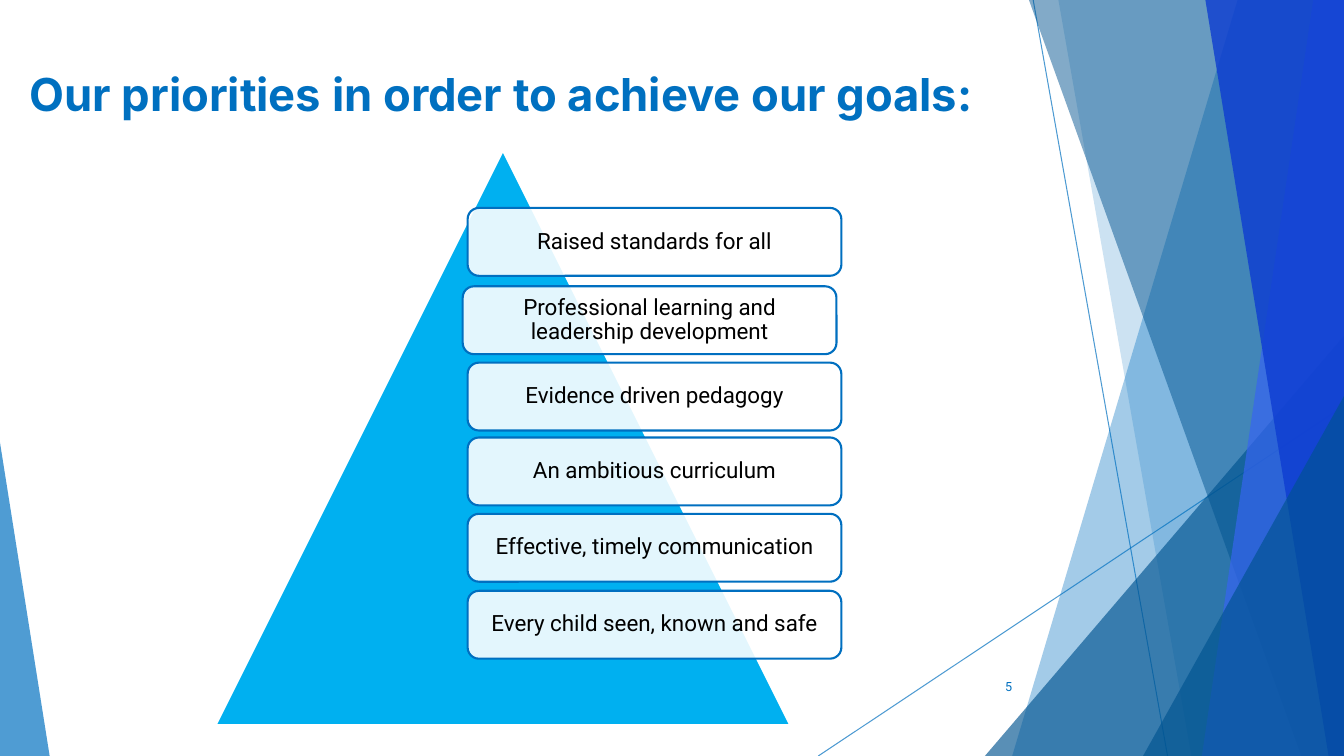
from lxml.etree import SubElement
from pptx import Presentation
from pptx.dml.color import RGBColor
from pptx.enum.shapes import MSO_CONNECTOR, MSO_SHAPE
from pptx.enum.text import MSO_ANCHOR, MSO_AUTO_SIZE, PP_ALIGN
from pptx.oxml.ns import qn
from pptx.util import Pt

WIDE, HIGH = 960, 540
COLORS = {
    "blue": "0070C0", "edge": "006FC0", "deep": "005390", "royal": "3764F2",
    "navy": "0D3CD1", "sky": "00B0F0", "white": "FFFFFF", "black": "000000",
}
# top left x, bottom left x, colour, opacity; each band runs to the right edge
BACK_BANDS = [(884, 723, "blue", 36), (756, 851, "blue", 20)]
FRONT_BANDS = [(735, 929.5, "deep", 49), (938, 858.5, "royal", 69),
               (861, 949, "navy", 80)]
# top, text
CARDS = [
    (148.5, "Raised standards for all"),
    (204.5, "Professional learning and leadership development"),
    (259, "Evidence driven pedagogy"),
    (312.5, "An ambitious curriculum"),
    (367, "Effective, timely communication"),
    (422, "Every child seen, known and safe"),
]


def rgb(name):
    return RGBColor.from_string(COLORS[name])


def fade(fill, percent):
    """Set the opacity of a solid fill or line."""
    color = fill._xPr.find(qn("a:solidFill"))[0]
    SubElement(color, qn("a:alpha"), val=str(percent * 1000))


def paint(shape, fill, alpha=100, line=None):
    shape.shadow.inherit = False
    shape.fill.solid()
    shape.fill.fore_color.rgb = rgb(fill)
    if alpha < 100:
        fade(shape.fill, alpha)
    if line:
        shape.line.color.rgb = rgb(line)
        shape.line.width = Pt(1.5)
    else:
        shape.line.fill.background()


def add_line(slide, *ends):
    line = slide.shapes.add_connector(MSO_CONNECTOR.STRAIGHT, *map(Pt, ends))
    line.line.color.rgb = rgb("blue")
    line.line.width = Pt(0.75)
    fade(line.line.fill, 69)
    SubElement(line._element.spPr, qn("a:effectLst"))


def add_band(slide, top, foot, color, alpha):
    pen = slide.shapes.build_freeform(Pt(top), 0)
    pen.add_line_segments([(Pt(x), Pt(y)) for x, y in
                           ((WIDE, 0), (WIDE, HIGH), (foot, HIGH))])
    paint(pen.convert_to_shape(), color, alpha)


def add_peak(slide, box, tip, color, alpha=100, line=None):
    """Draw a triangle whose tip lies at the given share of its width."""
    peak = slide.shapes.add_shape(MSO_SHAPE.ISOSCELES_TRIANGLE, *map(Pt, box))
    peak.adjustments[0] = tip
    paint(peak, color, alpha, line)


def write(shape, text, font, size, color, align, anchor, bold=False):
    frame = shape.text_frame
    frame.word_wrap = True
    frame.auto_size = MSO_AUTO_SIZE.NONE
    frame.vertical_anchor = anchor
    para = frame.paragraphs[0]
    para.alignment = align
    run = para.add_run()
    run.text = text
    run.font.name = font
    run.font.size = Pt(size)
    run.font.bold = bold
    run.font.color.rgb = rgb(color)
    return frame


def add_card(slide, left, top, text):
    card = slide.shapes.add_shape(MSO_SHAPE.ROUNDED_RECTANGLE,
                                  Pt(left), Pt(top), Pt(267), Pt(48.5))
    paint(card, "white", 89, "edge")
    frame = write(card, text, "Roboto", 16, "black",
                  PP_ALIGN.CENTER, MSO_ANCHOR.MIDDLE)
    frame.margin_left = frame.margin_right = Pt(7.5)
    frame.margin_top = frame.margin_bottom = Pt(7.5)
    frame.paragraphs[0].line_spacing = 0.9


def add_decor(slide):
    add_line(slide, 738, 0, 834, HIGH)
    add_line(slide, WIDE, 290, 584.5, HIGH)
    for band in BACK_BANDS:
        add_band(slide, *band)
    add_peak(slide, (703.5, 240, 256.5, 300), 1, "deep", 65)
    for band in FRONT_BANDS:
        add_band(slide, *band)
    add_peak(slide, (816.5, 283, 143.5, 257), 1, "deep", 65)
    add_peak(slide, (0, 316, 35.5, 224), 0, "blue", 69)


def set_title(slide, text):
    title = slide.shapes.title
    title.left, title.top = Pt(14), Pt(44)
    title.width, title.height = Pt(730), Pt(63)
    write(title, text, "Inter", 32.4, "blue", PP_ALIGN.LEFT,
          MSO_ANCHOR.TOP, True)


def add_number(slide, text):
    box = slide.shapes.add_textbox(Pt(676), Pt(476), Pt(54), Pt(29))
    write(box, text, "Roboto", 9, "blue", PP_ALIGN.RIGHT, MSO_ANCHOR.MIDDLE)


def main():
    deck = Presentation()
    deck.slide_width, deck.slide_height = Pt(WIDE), Pt(HIGH)
    slide = deck.slides.add_slide(deck.slide_layouts[5])
    add_decor(slide)
    set_title(slide, "Our priorities in order to achieve our goals:")
    add_peak(slide, (154, 107.5, 410.5, 410.5), 0.5, "sky", line="white")
    for index, (top, text) in enumerate(CARDS):
        add_card(slide, 330.5 if index == 1 else 334, top, text)
    add_number(slide, "5")
    deck.save("out.pptx")


if __name__ == "__main__":
    main()
